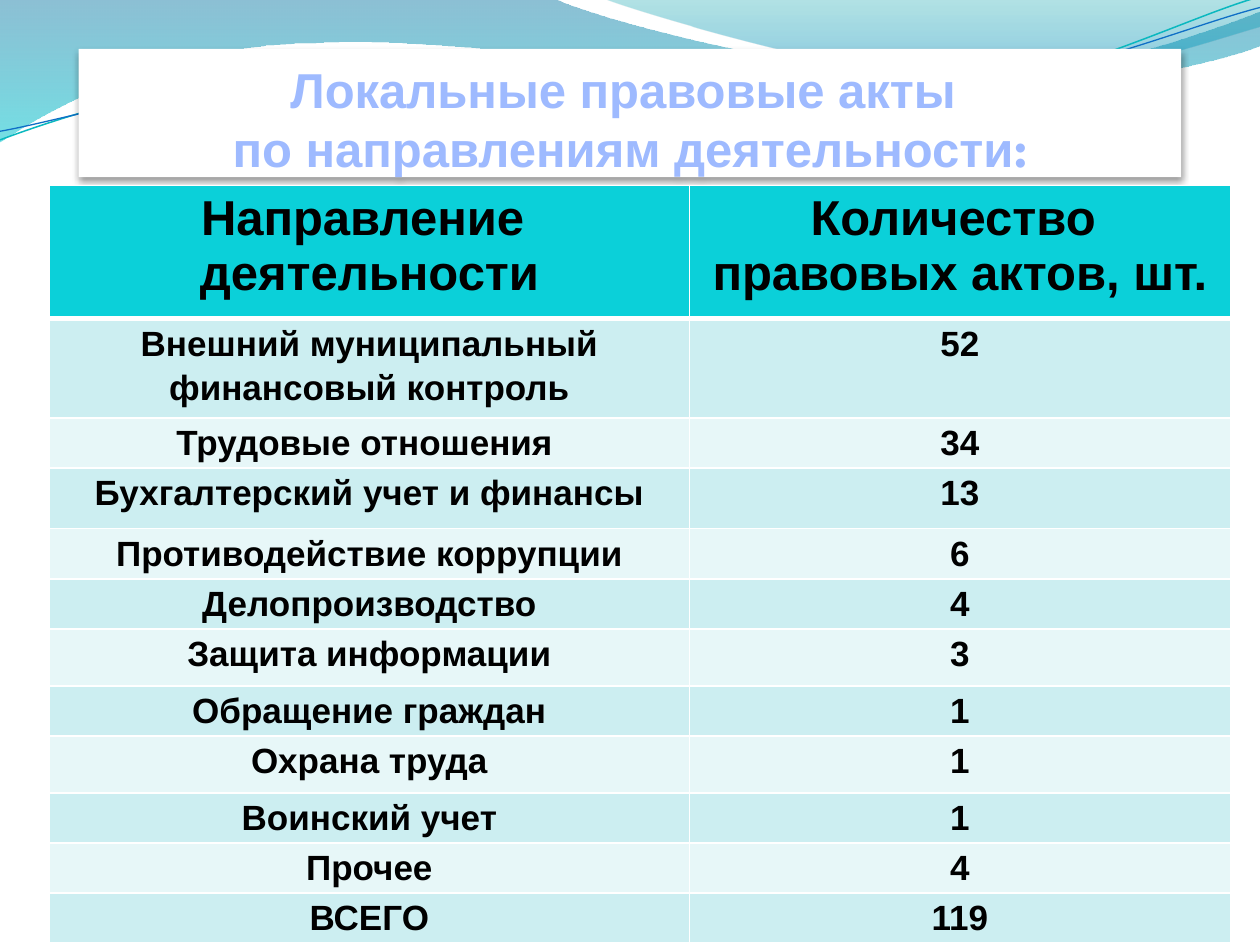
from lxml import etree
from pptx import Presentation
from pptx.dml.color import RGBColor
from pptx.enum.text import MSO_ANCHOR, PP_ALIGN
from pptx.oxml.ns import qn
from pptx.util import Pt

CENTER = PP_ALIGN.CENTER
BOTTOM = MSO_ANCHOR.BOTTOM

WHITE = RGBColor(0xFF, 0xFF, 0xFF)
BLACK = RGBColor(0x00, 0x00, 0x00)
TITLE_BLUE = RGBColor(0x9E, 0xBA, 0xFF)
HEADER_CYAN = RGBColor(0x0B, 0xD0, 0xD9)
ROW_DARK = RGBColor(0xCC, 0xEE, 0xF1)
ROW_LIGHT = RGBColor(0xE7, 0xF7, 0xF8)
DEEP_BLUE = RGBColor(0x00, 0x74, 0xA1)
AQUA = RGBColor(0x00, 0xC6, 0xCF)
TEAL = RGBColor(0x00, 0xA1, 0xA9)
SEA_BLUE = RGBColor(0x00, 0x8B, 0xBF)
LINE_TEAL = RGBColor(0x0A, 0xB8, 0xBF)
LINE_BLUE = RGBColor(0x0F, 0x6F, 0xC6)

STRAND_ROTATION = 357.3

WAVES = [
    ([(0, -0.7), (316.8, -0.7),
      (342.7, 12.2, 478.1, 45.4, 545.8, 45.4),
      (614.2, 45.4, 689.8, 18.7, 720, 6.5),
      (720.7, 25.9),
      (707.8, 31.7, 626.4, 54.7, 537.1, 54),
      (447.8, 54, 275, 20.2, 185, 24.5),
      (92.9, 25.2, 33.1, 59.8, -0.7, 81.4),
      (0, -0.7)],
     [(0, DEEP_BLUE, 45), (1, AQUA, 55)]),
    ([(344.9, -0.7),
      (366.5, 7.9, 491, 44.6, 553.7, 46.8),
      (616.3, 49.7, 691.9, 23, 720, 15.1),
      (720, 0), (344.9, -0.7)],
     [(0, TEAL, 30), (0.8, SEA_BLUE, 45)]),
]

STRANDS = [
    ([(-1.4, 63),
      (33.8, 51.7, 114.1, 29.4, 199.8, 29.9),
      (284.9, 30.3, 425.8, 67.3, 512.4, 64.9),
      (599.1, 62.4, 676.5, 25.7, 720.2, 15.5)],
     LINE_TEAL, 0.85),
    ([(-1.1, 58),
      (32.9, 53.8, 118.3, 32.5, 204.1, 33),
      (290.6, 33.4, 428.9, 63.1, 515.5, 61.4),
      (601.3, 59.6, 678.5, 30.1, 721.4, 21.3)],
     LINE_BLUE, 0.75),
]

HEADERS = [
    ["Направление ", "деятельности"],
    ["Количество ", "правовых актов, шт."],
]

ACTS = [
    ("Внешний муниципальный финансовый контроль", 52, 56.9),
    ("Трудовые отношения ", 34, 28.6),
    ("Бухгалтерский учет и финансы", 13, 34.7),
    ("Противодействие коррупции", 6, 28.6),
    ("Делопроизводство", 4, 28.6),
    ("Защита информации", 3, 32.7),
    ("Обращение граждан", 1, 28.6),
    ("Охрана труда", 1, 32.7),
    ("Воинский учет", 1, 28.6),
    ("Прочее", 4, 28.6),
    ("ВСЕГО", 119, 28.6),
]


def add_outline(slide, left, top, segments, close):
    points = [(Pt(left + x), Pt(top + y))
              for segment in segments for x, y in zip(segment[::2], segment[1::2])]
    builder = slide.shapes.build_freeform(*points[0], scale=1.0)
    builder.add_line_segments(points[1:], close=close)
    shape = builder.convert_to_shape()
    shape.shadow.inherit = False
    steps = iter(list(shape._element.spPr.iter(qn("a:lnTo"))))
    for segment in segments[1:]:
        step = next(steps)
        if len(segment) == 6:
            curve = etree.Element(qn("a:cubicBezTo"))
            step.addprevious(curve)
            for member in (step, next(steps), next(steps)):
                curve.append(member[0])
                member.getparent().remove(member)
    return shape


def add_waves(slide, left, top):
    for segments, stops in WAVES:
        shape = add_outline(slide, left, top, segments, True)
        shape.line.fill.background()
        shape.fill.gradient()
        shape.fill.gradient_angle = 270
        for stop, (position, color, opacity) in zip(shape.fill.gradient_stops, stops):
            stop.position = position
            stop.color.rgb = color
        colors = shape._element.spPr.iter(qn("a:srgbClr"))
        for color_element, (position, color, opacity) in zip(colors, stops):
            etree.SubElement(color_element, qn("a:alpha"), val=str(opacity * 1000))
    strands = []
    for segments, color, width in STRANDS:
        shape = add_outline(slide, left, top, segments, False)
        shape.rotation = STRAND_ROTATION
        shape.fill.background()
        shape.line.color.rgb = color
        shape.line.width = Pt(width)
        strands.append(shape)
    slide.shapes.add_group_shape(strands)


def add_run(paragraph, text, size, color, font="Arial"):
    run = paragraph.add_run()
    run.text = text
    run.font.name = font
    run.font.size = Pt(size)
    run.font.bold = True
    run.font.color.rgb = color


def add_title(slide, left, top, width, height):
    shape = slide.shapes.add_textbox(Pt(left), Pt(top), Pt(width), Pt(height))
    shape.fill.solid()
    shape.fill.fore_color.rgb = WHITE
    shape.line.fill.background()
    shape.shadow.inherit = False
    effects = shape._element.spPr.find(qn("a:effectLst"))
    shadow = etree.SubElement(effects, qn("a:outerShdw"), blurRad=str(Pt(4)),
                              dist=str(Pt(2)), dir="5400000", rotWithShape="0")
    shadow_color = etree.SubElement(shadow, qn("a:srgbClr"), val=str(BLACK))
    etree.SubElement(shadow_color, qn("a:alpha"), val="40000")
    frame = shape.text_frame
    frame.word_wrap = True
    frame.vertical_anchor = BOTTOM
    frame.margin_left = frame.margin_right = frame.margin_bottom = 0
    frame.margin_top = Pt(3.6)
    paragraph = frame.paragraphs[0]
    paragraph.alignment = CENTER
    add_run(paragraph, "Локальные правовые акты ", 28, TITLE_BLUE)
    paragraph.add_line_break()
    add_run(paragraph, "по направлениям деятельности", 28, TITLE_BLUE)
    add_run(paragraph, ":", 28, TITLE_BLUE, "TeX Gyre Schola")


def style_cell(cell, color, top_width, bottom_width):
    properties = cell._tc.get_or_add_tcPr()
    for side, width in (("L", 1), ("R", 1), ("T", top_width), ("B", bottom_width)):
        line = etree.SubElement(properties, qn(f"a:ln{side}"), w=str(Pt(width)))
        fill = etree.SubElement(line, qn("a:solidFill"))
        etree.SubElement(fill, qn("a:srgbClr"), val=str(WHITE))
    cell.fill.solid()
    cell.fill.fore_color.rgb = color


def write_cell(cell, lines, size, spacing=None):
    frame = cell.text_frame
    for index, line in enumerate(lines):
        paragraph = frame.add_paragraph() if index else frame.paragraphs[0]
        paragraph.alignment = CENTER
        paragraph.line_spacing = spacing
        add_run(paragraph, line, size, BLACK)


def add_acts_table(slide, left, top, width, height):
    table = slide.shapes.add_table(len(ACTS) + 1, 2, Pt(left), Pt(top),
                                   Pt(width), Pt(height)).table
    table.columns[0].width = Pt(365.7)
    table.columns[1].width = Pt(width - 365.7)
    table.rows[0].height = Pt(76.1)
    for column, lines in enumerate(HEADERS):
        cell = table.cell(0, column)
        style_cell(cell, HEADER_CYAN, 1, 3)
        write_cell(cell, lines, 28)
    for row, (area, count, row_height) in enumerate(ACTS, 1):
        table.rows[row].height = Pt(row_height)
        for column, value in enumerate((area, str(count))):
            cell = table.cell(row, column)
            cell.margin_left = cell.margin_right = Pt(5)
            cell.margin_top = cell.margin_bottom = 0
            style_cell(cell, ROW_DARK if row % 2 else ROW_LIGHT, 3 if row == 1 else 1, 1)
            write_cell(cell, [value], 20, 1.15)


def main():
    presentation = Presentation()
    presentation.slide_width = Pt(720)
    presentation.slide_height = Pt(540)
    slide = presentation.slides.add_slide(presentation.slide_layouts[6])
    add_waves(slide, 0, 0)
    add_title(slide, 44.9, 28, 630, 73.3)
    add_acts_table(slide, 28.2, 105.9, 675, 433.3)
    presentation.save("out.pptx")


if __name__ == "__main__":
    main()
